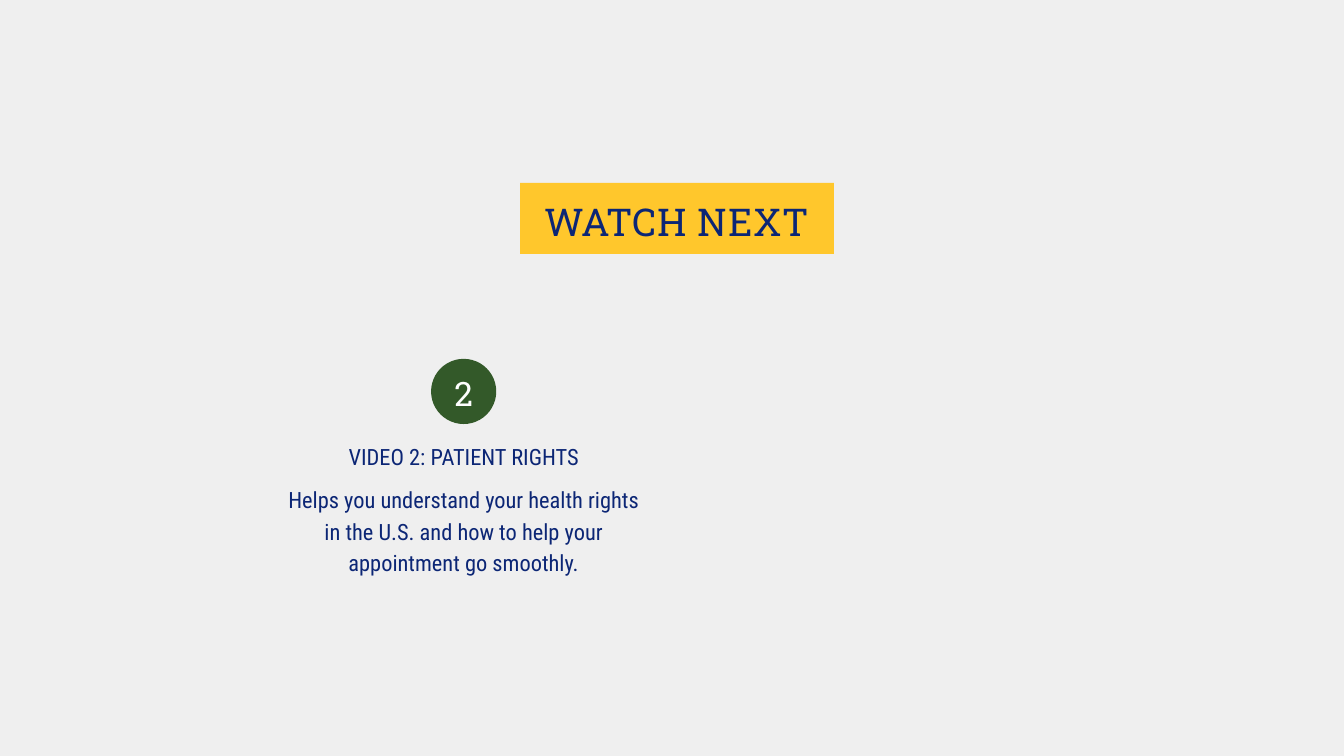
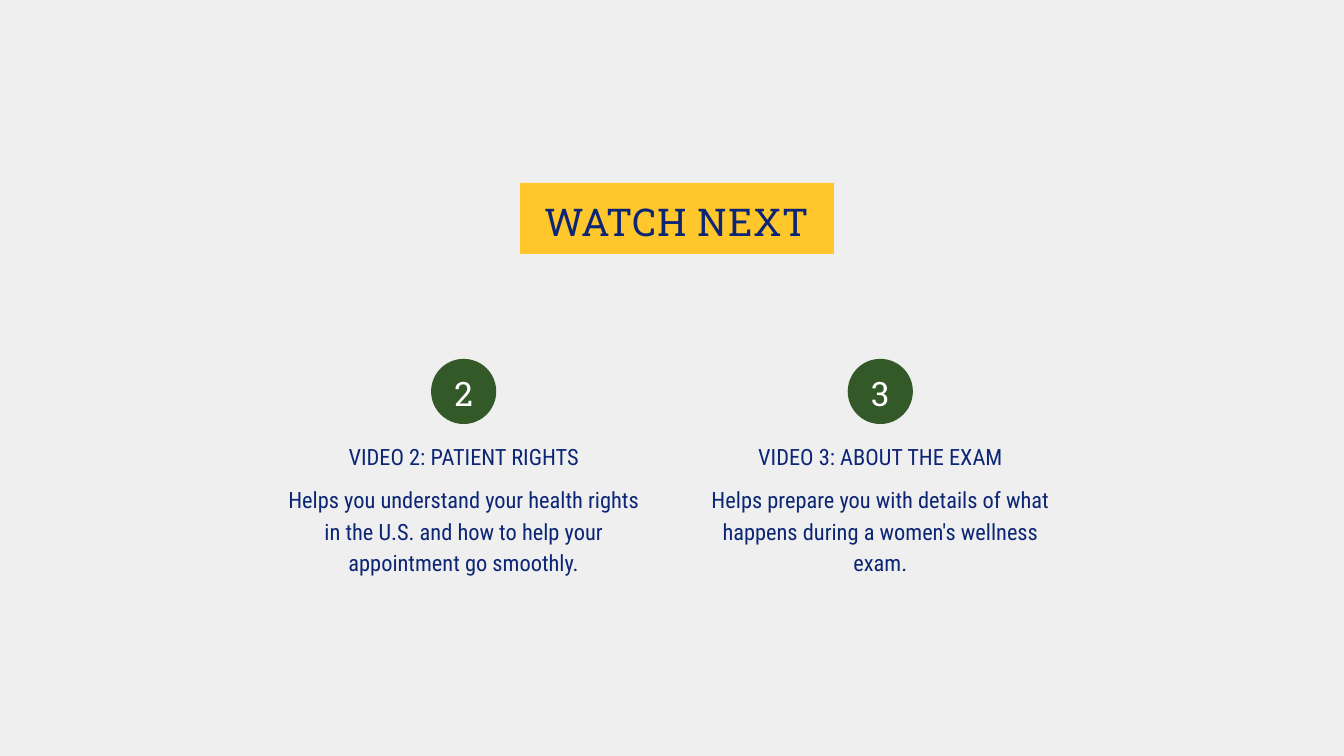
"""Build the two "Watch next" slides, which present the follow-up videos."""
from dataclasses import dataclass

import pptx
import pptx.dml.color
import pptx.enum.shapes
import pptx.enum.text
import pptx.presentation
import pptx.shapes.autoshape
import pptx.slide
import pptx.util
from pptx.util import Inches


@dataclass(frozen=True)
class TextStyle:
    font: str
    size: float
    line_spacing: float
    color: str
    tracking: float = 0


@dataclass(frozen=True)
class Theme:
    background: str = "EFEFEF"
    banner: str = "FFC72C"
    badge: str = "335929"
    title: TextStyle = TextStyle("Roboto Slab", 41, 57.4, "0C2675", 0.8)
    number: TextStyle = TextStyle("Roboto Slab", 36, 50.4, "FFFFFF")
    body: TextStyle = TextStyle("Roboto Condensed", 24, 33.6, "0C2675")


@dataclass(frozen=True)
class Box:
    left: float
    top: float
    width: float
    height: float

    def lengths(self) -> tuple[int, int, int, int]:
        return Inches(self.left), Inches(self.top), Inches(self.width), Inches(self.height)


@dataclass(frozen=True)
class Video:
    number: int
    heading: str
    description: str
    center: float

    def box(self, top: float, width: float, height: float) -> Box:
        return Box(self.center - width / 2, top, width, height)


THEME = Theme()
SHAPE_TYPE = pptx.enum.shapes.MSO_SHAPE
SLIDE_WIDTH, SLIDE_HEIGHT = 20, 11.25
COLUMN_OFFSET = 3.1
BADGE_SIZE = 0.97
COLUMN_WIDTH = 5.34

PATIENT_RIGHTS = Video(
    2,
    "PATIENT RIGHTS",
    "Helps you understand your health rights in the U.S. and how to help your appointment go smoothly.",
    SLIDE_WIDTH / 2 - COLUMN_OFFSET,
)
ABOUT_THE_EXAM = Video(
    3,
    "ABOUT THE EXAM",
    "Helps prepare you with details of what happens during a women's wellness exam.",
    SLIDE_WIDTH / 2 + COLUMN_OFFSET,
)
SLIDES = ([PATIENT_RIGHTS], [PATIENT_RIGHTS, ABOUT_THE_EXAM])


def rgb(color: str) -> pptx.dml.color.RGBColor:
    return pptx.dml.color.RGBColor.from_string(color)


def add_filled_shape(
    slide: pptx.slide.Slide, shape_type: pptx.enum.shapes.MSO_SHAPE, box: Box, color: str
) -> None:
    shape = slide.shapes.add_shape(shape_type, *box.lengths())
    shape.shadow.inherit = False
    shape.fill.solid()
    shape.fill.fore_color.rgb = rgb(color)
    shape.line.fill.background()


def add_text(slide: pptx.slide.Slide, text: str, box: Box, style: TextStyle) -> None:
    frame = slide.shapes.add_textbox(*box.lengths()).text_frame
    frame.word_wrap = True
    frame.auto_size = pptx.enum.text.MSO_AUTO_SIZE.SHAPE_TO_FIT_TEXT
    frame.margin_left = frame.margin_top = frame.margin_right = frame.margin_bottom = 0
    paragraph = frame.paragraphs[0]
    paragraph.alignment = pptx.enum.text.PP_ALIGN.CENTER
    paragraph.line_spacing = pptx.util.Pt(style.line_spacing)
    paragraph.font.name = style.font
    paragraph.font.size = pptx.util.Pt(style.size)
    paragraph.font.color.rgb = rgb(style.color)
    run = paragraph.add_run()
    run.text = text
    if style.tracking:
        run._r.get_or_add_rPr().set("spc", str(round(style.tracking * 100)))


def add_banner(slide: pptx.slide.Slide) -> None:
    add_filled_shape(slide, SHAPE_TYPE.RECTANGLE, Box(7.74, 2.72, 4.67, 1.06), THEME.banner)
    add_text(slide, "WATCH NEXT", Box(7.74, 2.83, 4.67, 0.76), THEME.title)


def add_video(slide: pptx.slide.Slide, video: Video) -> None:
    add_filled_shape(slide, SHAPE_TYPE.OVAL, video.box(5.34, BADGE_SIZE, BADGE_SIZE), THEME.badge)
    add_text(slide, str(video.number), video.box(5.45, 0.34, 0.66), THEME.number)
    heading = f"VIDEO {video.number}: {video.heading}"
    add_text(slide, heading, video.box(6.52, COLUMN_WIDTH, 0.44), THEME.body)
    add_text(slide, video.description, video.box(7.17, COLUMN_WIDTH, 1.36), THEME.body)


def add_watch_next_slide(
    presentation: pptx.presentation.Presentation, videos: list[Video]
) -> None:
    slide = presentation.slides.add_slide(presentation.slide_layouts[6])
    slide.background.fill.solid()
    slide.background.fill.fore_color.rgb = rgb(THEME.background)
    add_banner(slide)
    for video in videos:
        add_video(slide, video)


def main() -> None:
    presentation = pptx.Presentation()
    presentation.slide_width = Inches(SLIDE_WIDTH)
    presentation.slide_height = Inches(SLIDE_HEIGHT)
    for videos in SLIDES:
        add_watch_next_slide(presentation, videos)
    presentation.save("out.pptx")


if __name__ == "__main__":
    main()
